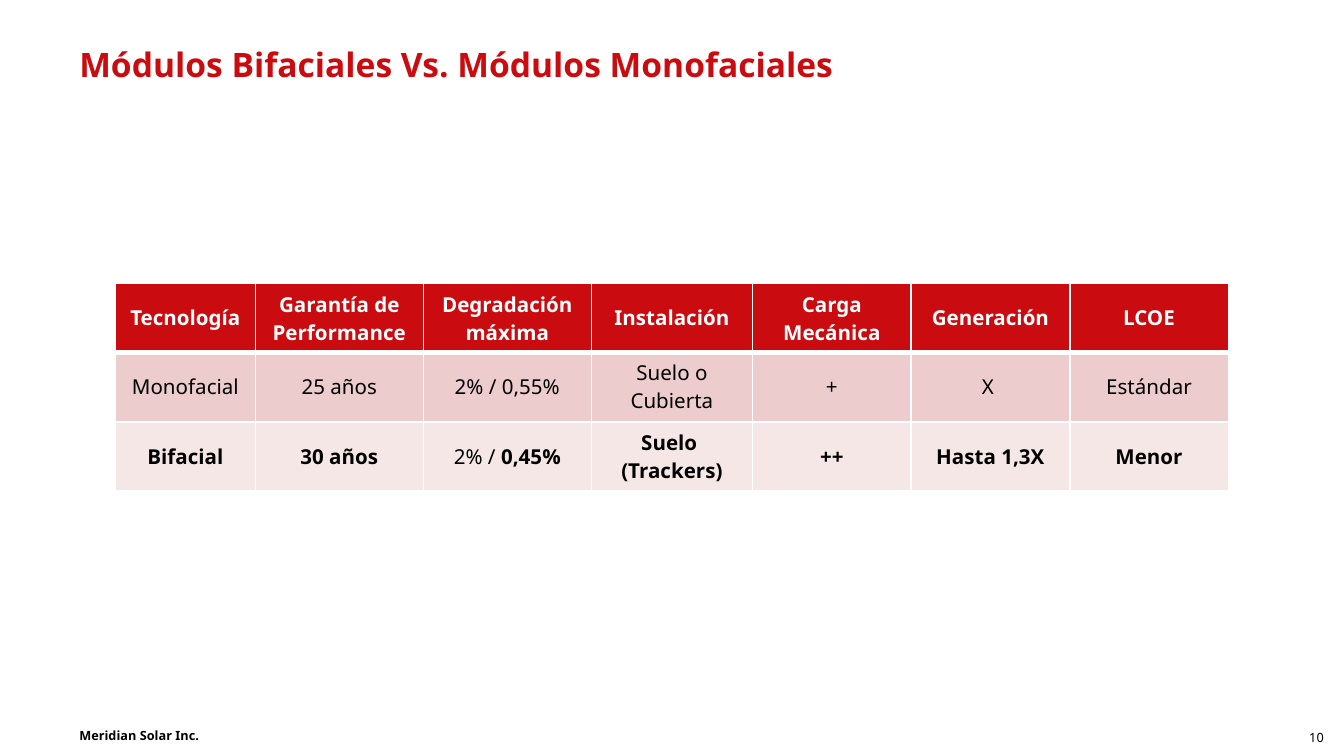
from lxml import etree
from pptx import Presentation
from pptx.dml.color import RGBColor as RGB
from pptx.enum.text import MSO_ANCHOR as Anchor, PP_ALIGN as Align
from pptx.oxml.ns import qn
from pptx.util import Inches, Pt

COLORS = {"red": "CA0B0F", "white": "FFFFFF", "black": "000000",
          "rose": "ECCCCC", "pale": "F6E7E7"}

# Wide slide, 16:9
deck = Presentation()
deck.slide_width, deck.slide_height = Inches(10), Inches(10 * 9 / 16)
slide = deck.slides.add_slide(deck.slide_layouts[6])


def add_run(para, text, size, color, bold):
    run = para.add_run()
    run.text = text
    form = {"name": "Noto Sans", "size": Pt(size), "bold": bold}
    for key, value in form.items():
        setattr(run.font, key, value)
    run.font.color.rgb = RGB.from_string(COLORS[color])


def add_edge(cell, side, width):
    line = etree.SubElement(cell._tc.get_or_add_tcPr(), qn(f"a:{side}"), w=str(Pt(width)))
    fill = etree.SubElement(line, qn("a:solidFill"))
    etree.SubElement(fill, qn("a:srgbClr"), val=COLORS["white"])


# Title, footer and page number
labels = [
    ("Módulos Bifaciales Vs. Módulos Monofaciales", (0.59, 0.33, 6.41, 0.71),
     18, "red", True, Align.LEFT, Anchor.TOP, True),
    ("Meridian Solar Inc.", (0.59, 5.38, 1.34, 0.19),
     6.8, "black", True, Align.LEFT, Anchor.MIDDLE, False),
    ("10", (9.57, 5.38, 0.28, 0.21),
     6.8, "black", False, Align.RIGHT, Anchor.MIDDLE, False),
]
for text, place, size, color, bold, align, anchor, wrap in labels:
    frame = slide.shapes.add_textbox(*map(Inches, place)).text_frame
    form = {"margin_left": 0, "margin_right": 0, "margin_top": 0, "margin_bottom": 0,
            "vertical_anchor": anchor, "word_wrap": wrap}
    for key, value in form.items():
        setattr(frame, key, value)
    para = frame.paragraphs[0]
    para.alignment = align
    add_run(para, text, size, color, bold)

# Table: fill, text colour, bold and cell texts of each row
rows = [
    ("red", "white", True,
     ["Tecnología", "Garantía de Performance", "Degradación máxima", "Instalación",
      "Carga Mecánica", "Generación", "LCOE"]),
    ("rose", "black", False,
     ["Monofacial", "25 años", "2% / 0,55%", "Suelo o Cubierta", "+", "X ", "Estándar"]),
    ("pale", "black", True,
     ["Bifacial", "30 años", "2% / 0,45%", "Suelo \n(Trackers)", "++", "Hasta 1,3X", "Menor"]),
]
widths = [1.04, 1.25, 1.25, 1.2, 1.18, 1.18, 1.18]
heights = [0.51, 0.52, 0.51]
table = slide.shapes.add_table(len(rows), len(widths), Inches(0.86), Inches(2.11),
                               Inches(sum(widths)), Inches(sum(heights))).table
for col, width in zip(table.columns, widths):
    col.width = Inches(width)
for row, height in zip(table.rows, heights):
    row.height = Inches(height)

for r, (fill, color, bold, texts) in enumerate(rows):
    for c, text in enumerate(texts):
        cell = table.cell(r, c)
        cell.vertical_anchor = Anchor.MIDDLE
        # Thick rule between the header and the body
        edges = {"lnL": 1, "lnR": 1, "lnT": 3 if r == 1 else 1, "lnB": 3 if r == 0 else 1}
        for side, width in edges.items():
            add_edge(cell, side, width)
        cell.fill.solid()
        cell.fill.fore_color.rgb = RGB.from_string(COLORS[fill])
        for n, part in enumerate(text.split("\n")):
            frame = cell.text_frame
            para = frame.add_paragraph() if n else frame.paragraphs[0]
            para.alignment = Align.CENTER
            # Only the second rate is bold in the last row
            head, slash, tail = part.partition("2% / ")
            if slash and bold:
                add_run(para, slash, 11, color, False)
                part = tail
            add_run(para, part, 11, color, bold)

deck.save("out.pptx")
